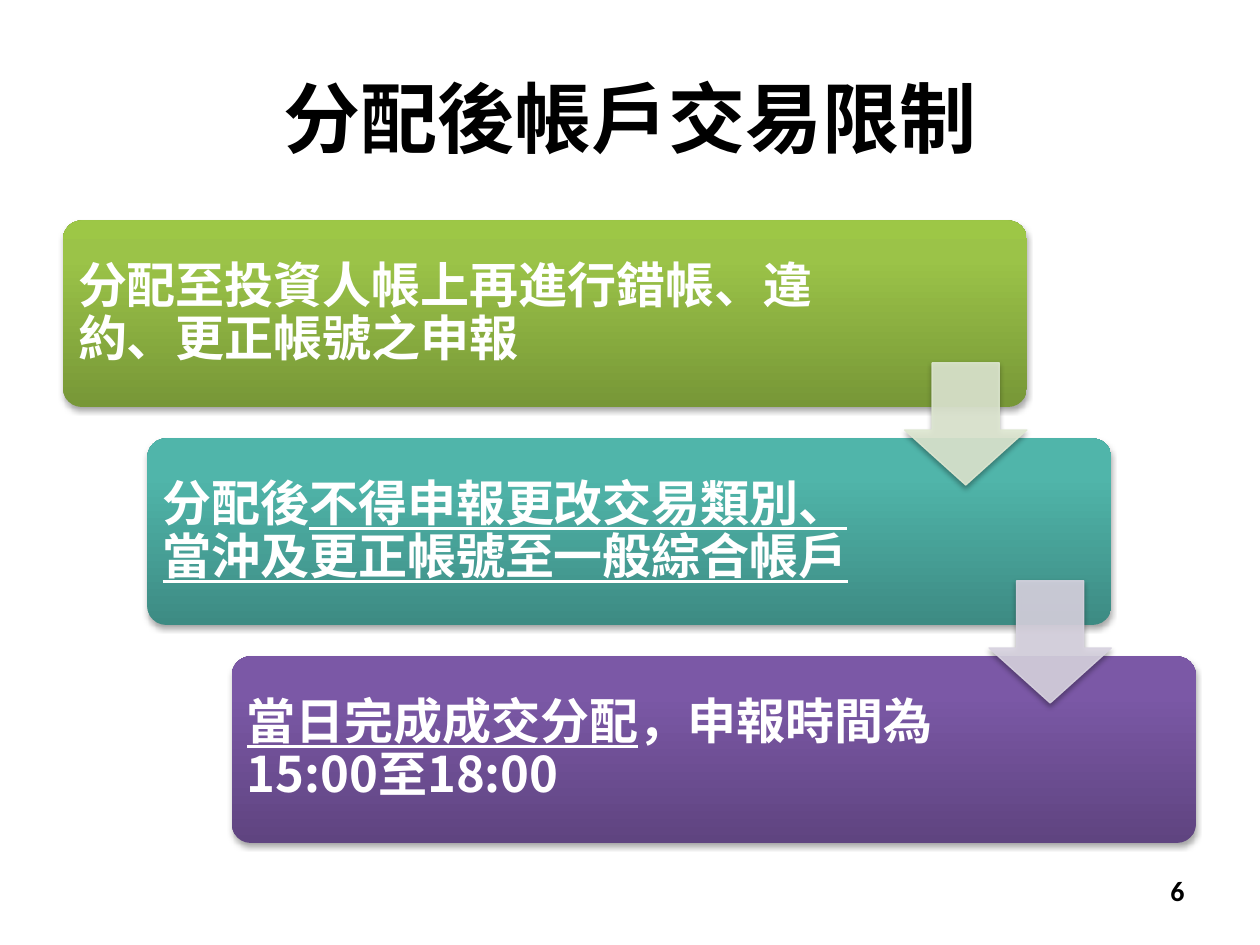
"""Build the slide on trading limits after allocation as a three-step cascade."""
from dataclasses import dataclass

from lxml import etree
from pptx import Presentation
from pptx.dml.color import RGBColor
from pptx.enum.shapes import MSO_SHAPE
from pptx.enum.text import MSO_ANCHOR, PP_ALIGN
from pptx.oxml.ns import qn
from pptx.util import Inches, Length, Pt

ROUNDED = MSO_SHAPE.ROUNDED_RECTANGLE
DOWN_ARROW = MSO_SHAPE.DOWN_ARROW
MIDDLE = MSO_ANCHOR.MIDDLE
LEFT, CENTER, RIGHT = PP_ALIGN.LEFT, PP_ALIGN.CENTER, PP_ALIGN.RIGHT


@dataclass(frozen=True)
class Theme:
    heading_font: str = "Calibri"
    body_font: str = "Noto Sans CJK SC"
    dark: str = "000000"
    light: str = "FFFFFF"
    title_size: int = 44
    body_size: int = 28
    number_size: int = 16
    shadow_opacity: int = 35
    arrow_opacity: int = 90


@dataclass(frozen=True)
class Phrase:
    text: str
    underline: bool = False


@dataclass(frozen=True)
class Step:
    phrases: tuple[Phrase, ...]
    gradient: tuple[str, str, str]
    text_width: float
    arrow_color: str = ""


@dataclass(frozen=True)
class Box:
    left: Length
    top: Length
    width: Length
    height: Length


THEME = Theme()
GRADIENT_POSITIONS = (0, 80, 100)
STEP_LEFT, STEP_TOP = Inches(0.5), Inches(1.75)
STEP_WIDTH, STEP_HEIGHT = Inches(7.65), Inches(1.48)
SHIFT_RIGHT, SHIFT_DOWN = Inches(0.67), Inches(1.73)
ARROW_SIZE, ARROW_OFFSET = Inches(0.97), Inches(1.13)

STEPS = (
    Step((Phrase("分配至投資人帳上再進行錯帳、違約、更正帳號之申報"),),
         ("779737", "9BC348", "9DC746"), 6.13, "DEE7D1"),
    Step((Phrase("分配後"), Phrase("不得申報更改交易類別、當沖及更正帳號至一般綜合帳戶", True)),
         ("3D8B83", "50B5AA", "4EB8AC"), 6.01, "D8D3E0"),
    Step((Phrase("當日完成成交分配", True), Phrase("，申報時間為15:00至18:00")),
         ("5F4480", "7B58A6", "7C57A8"), 6.01),
)


def add_color(parent, color: str, opacity: int = 100) -> None:
    """Append an RGB colour with opacity to an XML element."""
    element = etree.SubElement(parent, qn("a:srgbClr"), val=color)
    if opacity < 100:
        etree.SubElement(element, qn("a:alpha"), val=str(opacity * 1000))


def add_shadow(shape) -> None:
    """Give a shape a soft shadow straight below."""
    shape.shadow.inherit = False
    effects = shape._element.spPr.find(qn("a:effectLst"))
    shadow = etree.SubElement(effects, qn("a:outerShdw"), blurRad=str(Pt(3.1)),
                              dist=str(Pt(1.8)), dir="5400000", rotWithShape="0")
    add_color(shadow, THEME.dark, THEME.shadow_opacity)


def set_translucent(fill_format, color: str) -> None:
    """Fill with a solid arrow colour that lets the background through."""
    fill_format.solid()
    fill_format.fore_color.rgb = RGBColor.from_string(color)


def add_text(shapes, box: Box, phrases: tuple[Phrase, ...], font_name: str, size: int,
             color: str, alignment: PP_ALIGN, inset: float, line_spacing: float) -> None:
    """Add a wrapped, vertically centred text box of bold phrases."""
    shape = shapes.add_textbox(box.left, box.top, box.width, box.height)
    text_frame = shape.text_frame
    text_frame.word_wrap = True
    text_frame.vertical_anchor = MIDDLE
    text_frame.margin_left = text_frame.margin_right = Inches(inset)
    text_frame.margin_top = text_frame.margin_bottom = Inches(min(inset, 0.12) if inset > 0.1 else 0.05)
    paragraph = text_frame.paragraphs[0]
    paragraph.alignment = alignment
    paragraph.line_spacing = line_spacing
    for phrase in phrases:
        run = paragraph.add_run()
        run.text = phrase.text
        font = run.font
        font.name, font.size, font.bold = font_name, Pt(size), True
        font.underline = phrase.underline
        font.color.rgb = RGBColor.from_string(color)
        etree.SubElement(run._r.get_or_add_rPr(), qn("a:ea"), typeface=font_name)


def add_step(shapes, step: Step, index: int) -> None:
    """Draw one gradient panel of the cascade with its text."""
    left = STEP_LEFT + index * SHIFT_RIGHT
    top = STEP_TOP + index * SHIFT_DOWN
    panel = shapes.add_shape(ROUNDED, left, top, STEP_WIDTH, STEP_HEIGHT)
    panel.adjustments[0] = 0.1
    panel.line.fill.background()
    panel.fill.gradient()
    panel.fill.gradient_angle = 90
    stops = panel._element.spPr.find(qn("a:gradFill")).find(qn("a:gsLst"))
    stops.clear()
    for position, color in zip(GRADIENT_POSITIONS, step.gradient):
        add_color(etree.SubElement(stops, qn("a:gs"), pos=str(position * 1000)), color)
    add_shadow(panel)
    add_text(shapes, Box(left, top, Inches(step.text_width), STEP_HEIGHT), step.phrases,
             THEME.body_font, THEME.body_size, THEME.light, LEFT, 0.12, 0.9)


def add_arrow(shapes, color: str, index: int) -> None:
    """Draw the arrow from one panel to the next, flush with the panel's right side."""
    left = STEP_LEFT + index * SHIFT_RIGHT + STEP_WIDTH - ARROW_SIZE
    top = STEP_TOP + index * SHIFT_DOWN + ARROW_OFFSET
    arrow = shapes.add_shape(DOWN_ARROW, left, top, ARROW_SIZE, ARROW_SIZE)
    arrow.adjustments[0], arrow.adjustments[1] = 0.55, 0.45
    set_translucent(arrow.fill, color)
    set_translucent(arrow.line.fill, color)
    arrow.line.width = Pt(0.75)
    for element in arrow._element.spPr.iter(qn("a:srgbClr")):
        etree.SubElement(element, qn("a:alpha"), val=str(THEME.arrow_opacity * 1000))
    add_shadow(arrow)


def main() -> None:
    """Build and save the presentation."""
    presentation = Presentation()
    presentation.slide_width, presentation.slide_height = Inches(10), Inches(7.5)
    slide = presentation.slides.add_slide(presentation.slide_layouts[6])
    add_text(slide.shapes, Box(Inches(0.5), Inches(0.3), Inches(9), Inches(1.25)),
             (Phrase("分配後帳戶交易限制"),), THEME.heading_font, THEME.title_size,
             THEME.dark, CENTER, 0.1, 1.0)
    cascade = slide.shapes.add_group_shape().shapes
    for index, step in enumerate(STEPS):
        add_step(cascade, step, index)
    for index, step in enumerate(STEPS):
        if step.arrow_color:
            add_arrow(cascade, step.arrow_color, index)
    add_text(slide.shapes, Box(Inches(7.17), Inches(6.87), Inches(2.33), Inches(0.4)),
             (Phrase("6"),), THEME.heading_font, THEME.number_size, THEME.dark, RIGHT, 0.1, 1.0)
    presentation.save("out.pptx")


if __name__ == "__main__":
    main()
